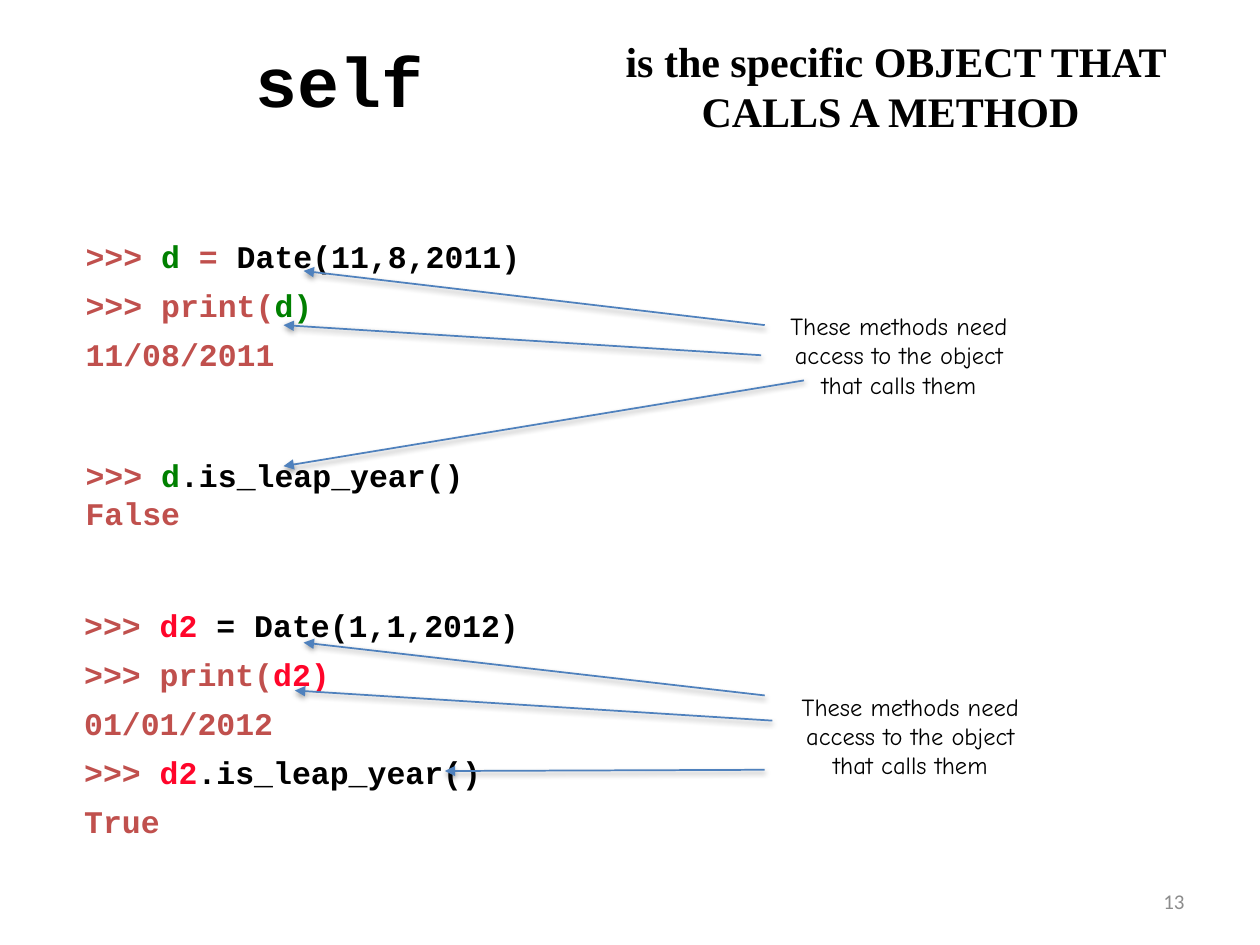
from lxml import etree
from pptx import Presentation
from pptx.dml.color import RGBColor
from pptx.enum import shapes, text
from pptx.oxml import parse_xml
from pptx.util import Pt

HUES = {
    "black": "000000",
    "rust": "C0504D",
    "green": "008000",
    "red": "FF052A",
    "blue": "4F81BD",
    "gray": "8C8C8C",
}
NS = "http://schemas.openxmlformats.org/drawingml/2006/main"
SHADE = (
    f'<a:effectLst xmlns:a="{NS}"><a:outerShdw blurRad="{Pt(3.1)}" dist="{Pt(1.6)}"'
    ' dir="5400000" rotWithShape="0"><a:srgbClr val="000000"><a:alpha val="38000"/>'
    "</a:srgbClr></a:outerShdw></a:effectLst>"
)
NOTE = "These methods need access to the object that calls them"
CODE = "Courier New"
MID, RIGHT = text.PP_ALIGN.CENTER, text.PP_ALIGN.RIGHT
TOP = text.MSO_ANCHOR.TOP


def hue(name):
    return RGBColor.from_string(HUES[name])


def style(font, face, size, bold=False, color=None):
    font.name, font.size, font.bold = face, Pt(size), bold
    if color:
        font.color.rgb = hue(color)


def add_box(parent, box):
    shape = parent.add_textbox(*map(Pt, box))
    shape.text_frame.word_wrap = True
    return shape


def write(shape, words, face, size, bold=False, color="black", align=MID, anchor=TOP):
    frame = shape.text_frame
    frame.text = words
    frame.word_wrap = True
    frame.auto_size = text.MSO_AUTO_SIZE.NONE
    frame.vertical_anchor = anchor
    para = frame.paragraphs[0]
    para.alignment = align
    style(para.font, face, size, bold, color)


def add_code(parent, box, lines):
    frame = add_box(parent, box).text_frame
    for i, (gap, runs) in enumerate(lines):
        para = frame.add_paragraph() if i else frame.paragraphs[0]
        para.line_spacing = gap
        style(para.font, CODE, 18, True)
        for words, color in runs:
            run = para.add_run()
            run.text = words
            run.font.color.rgb = hue(color)


def add_arrow(parent, ends):
    line = parent.add_connector(shapes.MSO_CONNECTOR.STRAIGHT, *map(Pt, ends))
    line.line.color.rgb = hue("blue")
    line.line.width = Pt(1)
    etree.SubElement(line.line._get_or_add_ln(), f"{{{NS}}}tailEnd", type="triangle")
    line._element.spPr.append(parse_xml(SHADE))


def add_head(slide, x, y):
    title = slide.shapes.title
    title.left, title.top, title.width, title.height = map(Pt, (x, y, 268, 55.5))
    write(title, "self", CODE, 40, True)
    claim = add_box(slide.shapes, (x + 285.8, y - 1.4, 332.6, 64.8))
    words = "is the specific OBJECT THAT CALLS A METHOD "
    write(claim, words, "Times New Roman", 24, True)


def add_demo(slide, x, y, codes, note, arrows):
    group = slide.shapes.add_group_shape().shapes
    for top, width, height, lines in codes:
        add_code(group, (x, y + top, width, height), lines)
    dx, dy = note
    write(add_box(group, (x + dx, y + dy, 157.7, 57.6)), NOTE, "Comic Neue", 14)
    for x1, y1, x2, y2 in arrows:
        add_arrow(group, (x + x1, y + y1, x + x2, y + y2))


def add_page(slide, x, y):
    page = add_box(slide.shapes, (x, y, 168, 28.8))
    write(page, "13", "Calibri", 12, color="gray", align=RIGHT,
          anchor=text.MSO_ANCHOR.MIDDLE)


def main():
    deck = Presentation()
    deck.slide_width, deck.slide_height = Pt(720), Pt(540)
    slide = deck.slides.add_slide(deck.slide_layouts[5])
    ask = (">>> ", "rust")
    show = (">>> print(", "rust")
    leap = (".is_leap_year()", "black")
    first = [
        (1.3, [ask, ("d", "green"), (" = ", "rust"), ("Date(11,8,2011)", "black")]),
        (1.3, [show, ("d)", "green")]),
        (1.3, [("11/08/2011", "rust")]),
    ]
    check = [
        (1.0, [ask, ("d", "green"), leap]),
        (1.0, [("False", "rust")]),
    ]
    second = [
        (1.0, [ask, ("d2 ", "red"), ("= Date(1,1,2012)", "black")]),
        (1.3, [show, ("d2)", "red")]),
        (1.3, [("01/01/2012", "rust")]),
        (1.3, [ask, ("d2", "red"), leap]),
        (1.3, [("True", "rust")]),
    ]
    add_head(slide, 59.8, 18)
    add_demo(
        slide, 41.8, 125.3,
        [(0, 635.8, 92.2, first), (131.8, 546.5, 51.1, check)],
        (393.1, 48.9),
        [
            (395.2, 60.5, 131.7, 29.5),
            (393.1, 77.7, 120.2, 60.5),
            (417.6, 92.1, 120.2, 141.1),
        ],
    )
    add_demo(
        slide, 41, 342.7,
        [(0, 546.5, 142.6, second)],
        (400.4, 49),
        [
            (396, 54.7, 132.5, 24.5),
            (400.4, 69.1, 127.5, 51.9),
            (396, 97.2, 213.2, 97.9),
        ],
    )
    add_page(slide, 516, 500.5)
    deck.save("out.pptx")


if __name__ == "__main__":
    main()
